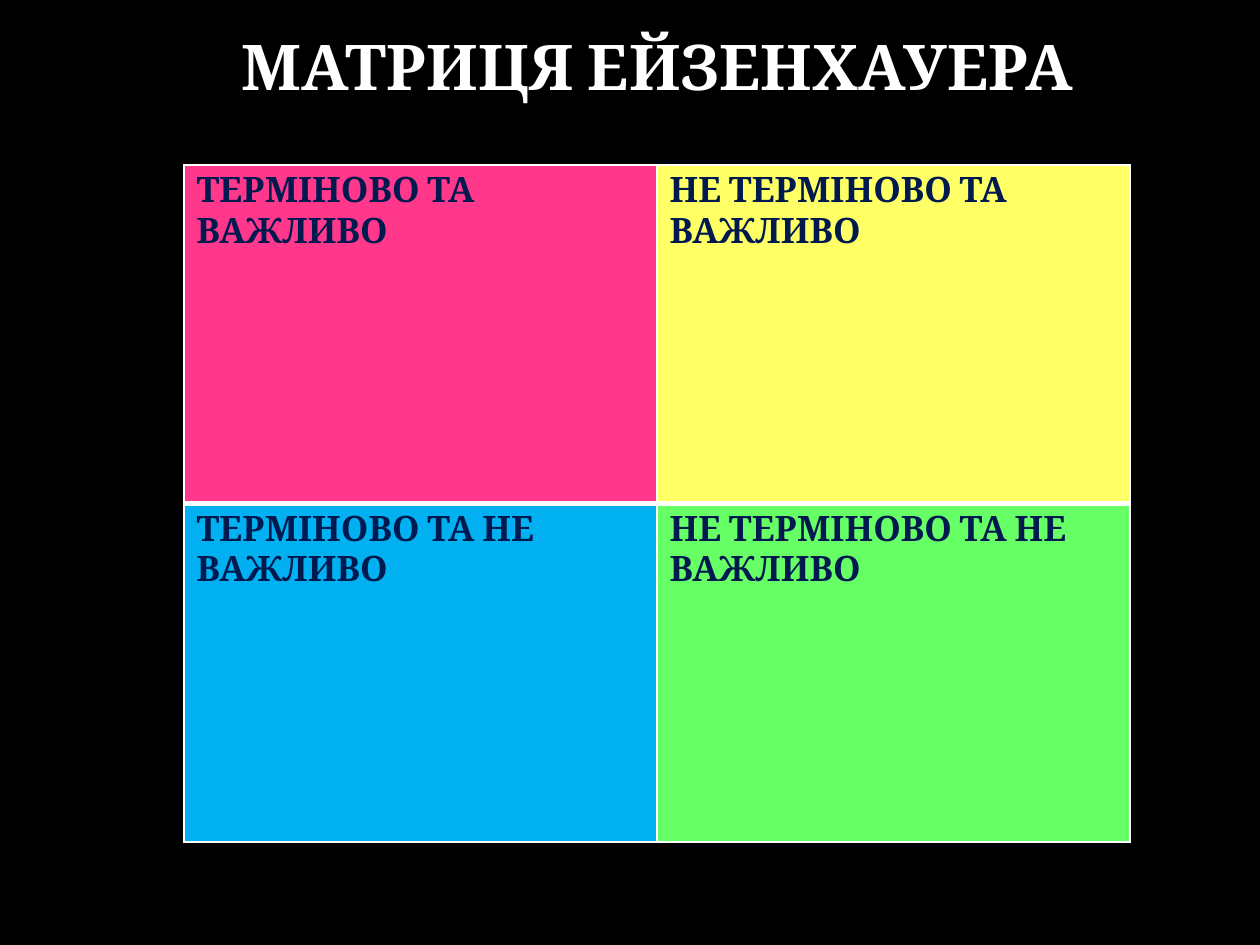
from dataclasses import dataclass

from lxml import etree
from pptx import Presentation
from pptx.dml.color import RGBColor
from pptx.enum.text import MSO_ANCHOR, PP_ALIGN
from pptx.oxml.ns import qn
from pptx.util import Emu, Pt

CENTER = PP_ALIGN.CENTER
MIDDLE = MSO_ANCHOR.MIDDLE
EMU_PER_PX = 914400 / 126
FONT = "Cambria"
WHITE = "FFFFFF"
NAVY = "001A4F"
THIN, THICK = 1, 3


@dataclass(frozen=True)
class Quadrant:
    row: int
    column: int
    label: str
    fill: str


QUADRANTS = [
    Quadrant(0, 0, "ТЕРМІНОВО ТА ВАЖЛИВО", "FF388C"),
    Quadrant(0, 1, "НЕ ТЕРМІНОВО ТА ВАЖЛИВО", "FFFF66"),
    Quadrant(1, 0, "ТЕРМІНОВО ТА НЕ ВАЖЛИВО", "00B0F0"),
    Quadrant(1, 1, "НЕ ТЕРМІНОВО ТА НЕ ВАЖЛИВО", "66FF66"),
]


def px(length: int) -> Emu:
    return Emu(round(length * EMU_PER_PX))


def color(value: str) -> RGBColor:
    return RGBColor.from_string(value)


def write(paragraph, text: str, size: int, text_color: str) -> None:
    paragraph.text = text
    paragraph.font.name = FONT
    paragraph.font.size = Pt(size)
    paragraph.font.bold = True
    paragraph.font.color.rgb = color(text_color)


def set_borders(cell, widths: dict[str, int]) -> None:
    properties = cell._tc.get_or_add_tcPr()
    for position, (side, width) in enumerate(widths.items()):
        border = etree.Element(qn(f"a:ln{side}"), w=str(Pt(width)))
        line_fill = etree.SubElement(border, qn("a:solidFill"))
        etree.SubElement(line_fill, qn("a:srgbClr"), val=WHITE)
        properties.insert(position, border)


def draw_title(slide, text: str) -> None:
    title = slide.shapes.add_textbox(px(134), px(0), px(1047), px(131)).text_frame
    title.word_wrap = True
    title.vertical_anchor = MIDDLE
    write(title.paragraphs[0], text, 36, WHITE)
    title.paragraphs[0].alignment = CENTER


def draw_quadrant(matrix, quadrant: Quadrant) -> None:
    cell = matrix.cell(quadrant.row, quadrant.column)
    cell.fill.solid()
    cell.fill.fore_color.rgb = color(quadrant.fill)
    write(cell.text_frame.paragraphs[0], quadrant.label, 20, NAVY)
    top, bottom = (THIN, THICK) if quadrant.row == 0 else (THICK, THIN)
    set_borders(cell, {"L": THIN, "R": THIN, "T": top, "B": bottom})


def main() -> None:
    presentation = Presentation()
    presentation.slide_width = px(1260)
    presentation.slide_height = px(945)
    slide = presentation.slides.add_slide(presentation.slide_layouts[6])
    slide.background.fill.solid()
    slide.background.fill.fore_color.rgb = color("000000")

    draw_title(slide, "МАТРИЦЯ ЕЙЗЕНХАУЕРА")
    matrix = slide.shapes.add_table(2, 2, px(184), px(165), px(946), px(677)).table
    for quadrant in QUADRANTS:
        draw_quadrant(matrix, quadrant)
    presentation.save("out.pptx")


if __name__ == "__main__":
    main()
